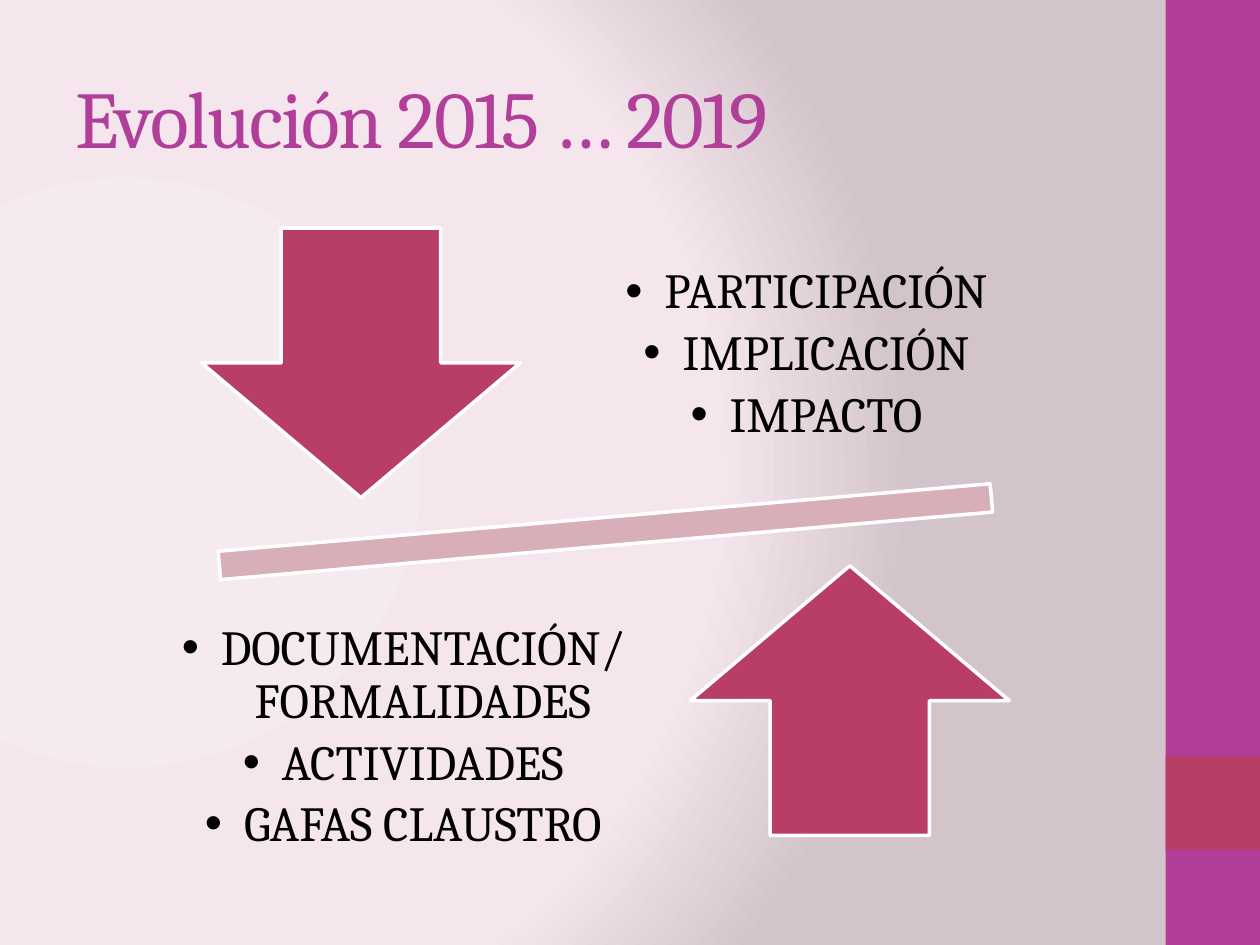
from lxml import etree
from pptx import Presentation
from pptx.dml.color import RGBColor
from pptx.enum import shapes, text
from pptx.oxml import ns
from pptx.util import Inches, Pt

FONT = "Cambria"
PURPLE, CRIMSON, ROSE, WHITE, BLACK = "B13F9A", "B83D68", "D8AFB9", "FFFFFF", "000000"
BACKDROP = [(0, "F5EAEF"), (75, "F5E6ED"), (100, "D3C4CB")]


def rgb(value):
    return RGBColor.from_string(value)


def paint_background(slide):
    fill = slide.background.fill
    fill.solid()
    solid = slide.element.find(".//" + ns.qn("p:bgPr")).find(ns.qn("a:solidFill"))
    gradient = etree.Element(ns.qn("a:gradFill"), rotWithShape="1")
    stops = etree.SubElement(gradient, ns.qn("a:gsLst"))
    for position, colour in BACKDROP:
        stop = etree.SubElement(stops, ns.qn("a:gs"), pos=str(position * 1000))
        etree.SubElement(stop, ns.qn("a:srgbClr"), val=colour)
    circle = etree.SubElement(gradient, ns.qn("a:path"), path="circle")
    etree.SubElement(circle, ns.qn("a:fillToRect"),
                     l="20000", t="50000", r="100000", b="50000")
    solid.getparent().replace(solid, gradient)


def place(part, left, top, width, height):
    part.left, part.top = Inches(left), Inches(top)
    part.width, part.height = Inches(width), Inches(height)


def add_figure(slide, preset, box, colour, outline=None):
    figure = slide.shapes.add_shape(preset, *map(Inches, box))
    figure.shadow.inherit = False
    figure.fill.solid()
    figure.fill.fore_color.rgb = rgb(colour)
    if outline:
        figure.line.color.rgb = rgb(outline)
        figure.line.width = Pt(2)
    else:
        figure.line.fill.background()
    return figure


def style_run(run, size, colour):
    run.font.name = FONT
    run.font.size = Pt(size)
    run.font.color.rgb = rgb(colour)


def add_sidebar(slide, left, top, width, height):
    add_figure(slide, shapes.MSO_SHAPE.RECTANGLE, (left, top, width, height), PURPLE)
    add_figure(slide, shapes.MSO_SHAPE.RECTANGLE,
               (left, top + 0.8 * height, width, width), CRIMSON)


def fill_title(title, box, wording):
    place(title, *box)
    frame = title.text_frame
    frame.text = wording
    frame.auto_size = text.MSO_AUTO_SIZE.NONE
    frame.vertical_anchor = text.MSO_ANCHOR.MIDDLE
    heading = frame.paragraphs[0]
    heading.alignment = text.PP_ALIGN.LEFT
    style_run(heading.runs[0], 46, PURPLE)
    heading.runs[0].font._element.set("spc", "-100")


def fill_list(body, box, inset, entries):
    place(body, *box)
    frame = body.text_frame
    frame.text = "\n".join(entries)
    frame.auto_size = text.MSO_AUTO_SIZE.NONE
    frame.word_wrap = True
    frame.vertical_anchor = text.MSO_ANCHOR.MIDDLE
    frame.margin_left = frame.margin_right = Inches(inset)
    frame.margin_top = frame.margin_bottom = Inches(inset)
    for entry in frame.paragraphs:
        entry.alignment = text.PP_ALIGN.CENTER
        entry.line_spacing = 0.9
        entry.space_before = Pt(0)
        entry.space_after = Pt(5)
        properties = entry._p.get_or_add_pPr()
        properties.set("marL", str(Inches(0.31)))
        properties.set("indent", str(Inches(-0.31)))
        style_run(entry.runs[0], 28, BLACK)


def add_balance(slide, left, top, rising, falling):
    beam = add_figure(slide, shapes.MSO_SHAPE.MATH_MINUS,
                      (left, top + 2.19, 8.37, 0.96), ROSE, WHITE)
    beam.rotation = 355
    arrow_size = (2.53, 2.14)
    add_figure(slide, shapes.MSO_SHAPE.DOWN_ARROW,
               (left + 0.98, top + 0.26, *arrow_size), CRIMSON, WHITE)
    add_figure(slide, shapes.MSO_SHAPE.UP_ARROW,
               (left + 4.86, top + 2.94, *arrow_size), CRIMSON, WHITE)
    upper_list, lower_list = slide.placeholders[1], slide.placeholders[2]
    fill_list(upper_list, (left + 3.7, top + 0.14, 4.16, 2.25), 0.11, rising)
    fill_list(lower_list, (left + 0.58, top + 3.18, 4, 2.25), 0.06, falling)


def main():
    deck = Presentation()
    deck.slide_width, deck.slide_height = Inches(10), Inches(7.5)
    slide = deck.slides.add_slide(deck.slide_layouts[3])
    paint_background(slide)
    add_sidebar(slide, 9.25, 0, 0.75, 7.5)
    fill_title(slide.shapes.title, (0.5, 0.3, 8.33, 1.25), "Evolución 2015 … 2019")
    add_balance(slide, 0.62, 1.55,
                ["PARTICIPACIÓN", "IMPLICACIÓN", "IMPACTO"],
                ["DOCUMENTACIÓN/FORMALIDADES", "ACTIVIDADES", "GAFAS CLAUSTRO"])
    deck.save("out.pptx")


if __name__ == "__main__":
    main()
